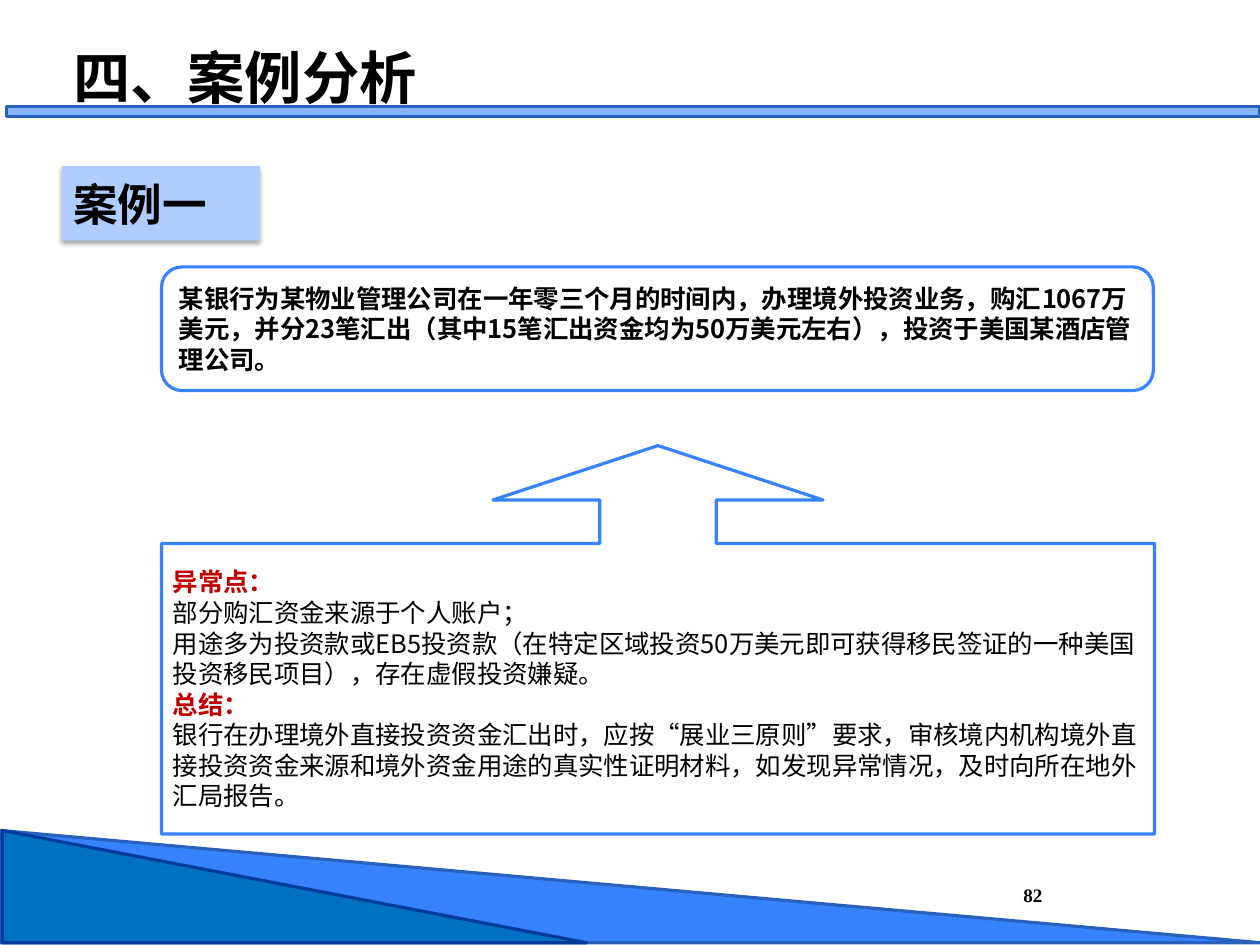
from lxml import etree
from pptx import Presentation
from pptx.dml.color import RGBColor
from pptx.enum.shapes import MSO_SHAPE
from pptx.enum.text import MSO_ANCHOR, PP_ALIGN
from pptx.oxml import parse_xml
from pptx.oxml.ns import qn
from pptx.util import Inches, Pt

RECT, ROUND = MSO_SHAPE.RECTANGLE, MSO_SHAPE.ROUNDED_RECTANGLE
WEDGE, CALLOUT = MSO_SHAPE.RIGHT_TRIANGLE, MSO_SHAPE.UP_ARROW_CALLOUT
MIDDLE, BOTTOM = MSO_ANCHOR.MIDDLE, MSO_ANCHOR.BOTTOM
LEFT, RIGHT = PP_ALIGN.LEFT, PP_ALIGN.RIGHT

COLORS = {"blue": "3783FF", "edge": "2961BD", "deep": "0070C0",
          "navy": "003B9B", "bar": "87B5FF", "pale": "AFCDFF",
          "white": "FFFFFF", "black": "000000", "red": "C00000"}
SANS, SERIF = "Noto Sans CJK SC", "Times New Roman"
SHADOW = """<a:effectLst xmlns:a="http://schemas.openxmlformats.org/drawingml/2006/main">
<a:outerShdw blurRad="39370" dist="22860" dir="5400000" rotWithShape="0">
<a:srgbClr val="000000"><a:alpha val="35000"/></a:srgbClr></a:outerShdw></a:effectLst>"""


def rgb(name):
    return RGBColor.from_string(COLORS[name])


class Deck:
    def __init__(self, width, height):
        self.prs = Presentation()
        self.prs.slide_width, self.prs.slide_height = Inches(width), Inches(height)
        self.slide = self.prs.slides.add_slide(self.prs.slide_layouts[6])

    def shape(self, kind, box, fill, line=None, adjust=()):
        item = self.slide.shapes.add_shape(kind, *map(Inches, box))
        item.shadow.inherit = False
        item.fill.solid()
        item.fill.fore_color.rgb = rgb(fill)
        if line:
            item.line.color.rgb = rgb(line)
            item.line.width = Pt(2)
        else:
            item.line.fill.background()
        for i, value in enumerate(adjust):
            item.adjustments[i] = value
        return item

    def box(self, box):
        return self.slide.shapes.add_textbox(*map(Inches, box))

    def shade(self, item):
        props = item._element.spPr
        props.remove(props.find(qn("a:effectLst")))
        props.append(parse_xml(SHADOW))

    def text(self, item, lines, size, font=SANS, anchor=MIDDLE, align=LEFT,
             pitch=None, inset=None):
        """Each line is a tuple of text, colour and bold."""
        frame = item.text_frame
        frame.word_wrap, frame.vertical_anchor = True, anchor
        if inset is not None:
            for side in ("left", "right", "top", "bottom"):
                setattr(frame, f"margin_{side}", Inches(inset))
        for i, (words, color, bold) in enumerate(lines):
            para = frame.add_paragraph() if i else frame.paragraphs[0]
            para.alignment = align
            if pitch:
                para.line_spacing = Pt(pitch)
            run = para.add_run()
            run.text = words
            style = {"name": font, "size": Pt(size), "bold": bold}
            for key, value in style.items():
                setattr(run.font, key, value)
            run.font.color.rgb = rgb(color)
            etree.SubElement(run._r.rPr, qn("a:ea")).set("typeface", font)


def main():
    deck = Deck(11, 8.25)

    # Corner wedges and title bar
    deck.shape(WEDGE, (0, 7.25, 11, 0.98), "blue", "edge")
    deck.shape(WEDGE, (0.02, 7.25, 5.1, 0.98), "deep", "navy")
    deck.shape(RECT, (0.06, 0.93, 10.94, 0.09), "bar", "edge")

    # Page number
    deck.text(deck.box((8.65, 7.49, 0.45, 0.42)), [("82", "black", True)], 12,
              font=SERIF, anchor=BOTTOM, align=RIGHT, inset=0)

    # Case label and title
    label = deck.shape(RECT, (0.54, 1.45, 1.73, 0.65), "pale")
    deck.shade(label)
    deck.text(label, [("案例一", "black", True)], 28)
    deck.text(deck.box((0.54, 0.35, 6.54, 0.63)),
              [("四、案例分析", "black", True)], 36)

    # Case facts
    facts = deck.shape(ROUND, (1.41, 2.33, 8.66, 1.08), "white", "blue")
    deck.text(facts, [(
        "某银行为某物业管理公司在一年零三个月的时间内，办理境外投资业务，购汇1067万美元，"
        "并分23笔汇出（其中15笔汇出资金均为50万美元左右），投资于美国某酒店管理公司。",
        "black", True)], 16, pitch=19.2)

    # Findings and summary
    notes = deck.shape(CALLOUT, (1.41, 3.89, 8.67, 3.39), "white", "blue",
                       (0.3, 0.425, 0.14, 0.748))
    deck.text(notes, [
        ("异常点：", "red", True),
        ("部分购汇资金来源于个人账户；", "black", False),
        ("用途多为投资款或EB5投资款（在特定区域投资50万美元即可获得移民签证的"
         "一种美国投资移民项目），存在虚假投资嫌疑。", "black", False),
        ("总结：", "red", True),
        ("银行在办理境外直接投资资金汇出时，应按“展业三原则”要求，审核境内机构境外直接"
         "投资资金来源和境外资金用途的真实性证明材料，如发现异常情况，及时向所在地外汇局报告。",
         "black", False)], 16, pitch=19.2)

    deck.prs.save("out.pptx")


if __name__ == "__main__":
    main()
